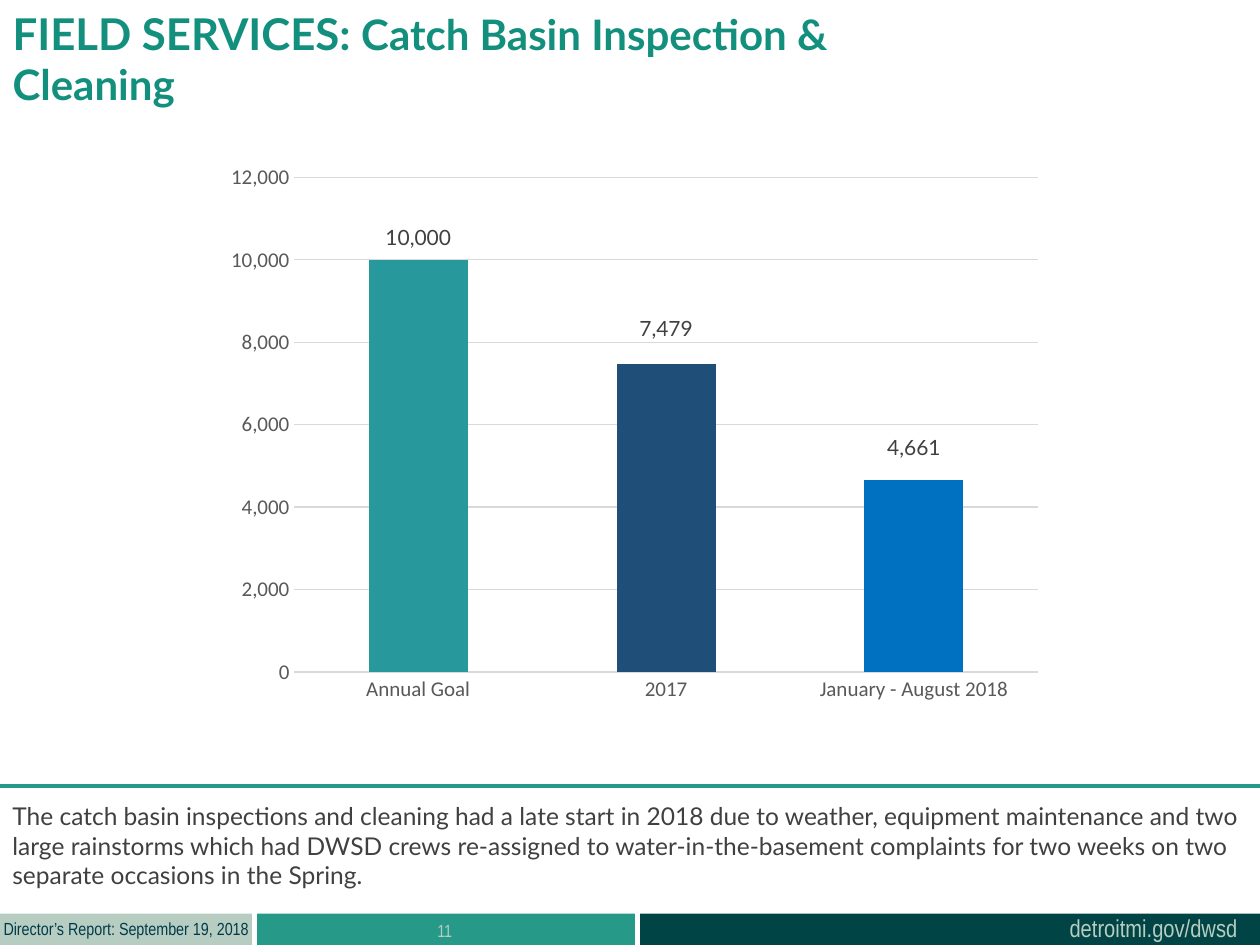
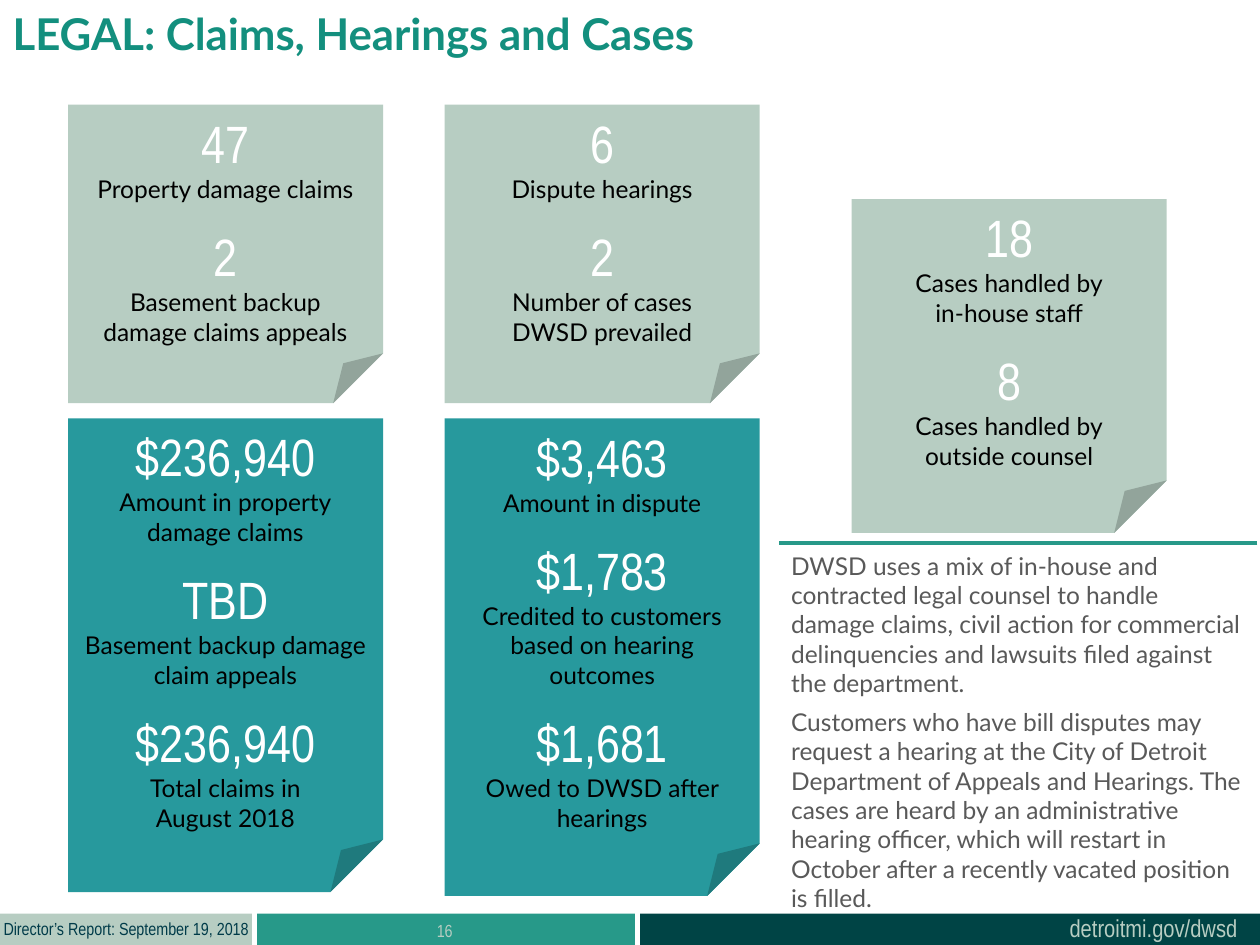
from lxml.etree import SubElement
from pptx import Presentation
from pptx.chart.data import CategoryChartData
from pptx.dml.color import RGBColor
from pptx.enum.chart import XL_CHART_TYPE, XL_TICK_MARK
from pptx.enum.shapes import MSO_CONNECTOR, MSO_SHAPE
from pptx.enum.text import MSO_ANCHOR, MSO_AUTO_SIZE, PP_ALIGN
from pptx.oxml import parse_xml
from pptx.oxml.ns import nsdecls, qn
from pptx.util import Inches, Pt

# Shared look
GREEN, DEEP, SAGE, TEAL = "279989", "004445", "B7CDC2", "27999D"
NAVY, BLUE, INK, TITLE = "1F4E79", "0070C0", "003B49", "138F7E"
BLACK, WHITE, DARK, GREY, RULE = "000000", "FFFFFF", "404040", "595959", "D9D9D9"
LATO, NARROW, CALIBRI = "Lato", "Arial Narrow", "Calibri"


def rgb(code):
    return RGBColor.from_string(code)


def style(font, size, color, face, bold=False):
    font.size, font.name, font.bold = Pt(size), face, bold
    font.color.rgb = rgb(color)


def place(shape, box):
    shape.left, shape.top, shape.width, shape.height = map(Inches, box)


def block(slide, kind, box, color):
    shape = slide.shapes.add_shape(kind, *map(Inches, box))
    shape.shadow.inherit = False
    shape.fill.solid()
    shape.fill.fore_color.rgb = rgb(color)
    shape.line.fill.background()
    return shape


def label(slide, box, text, size, color, face=LATO, wrap=True, align=PP_ALIGN.LEFT):
    frame = slide.shapes.add_textbox(*map(Inches, box)).text_frame
    frame.word_wrap = wrap
    para = frame.paragraphs[0]
    para.text, para.alignment = text, align
    style(para.font, size, color, face)


def rule(slide, left, right, top):
    line = slide.shapes.add_connector(
        MSO_CONNECTOR.STRAIGHT, Inches(right), Inches(top), Inches(left), Inches(top))
    line.line.color.rgb = rgb(GREEN)
    line.line.width = Pt(2.25)
    SubElement(line._element.spPr, qn("a:effectLst"))


# Footer bands with date, page and web address
def footer(slide, page, top=7.25):
    for left, width, color in ((2.04, 3, GREEN), (5.08, 5, DEEP), (0, 2, SAGE)):
        block(slide, MSO_SHAPE.RECTANGLE, (left, top, width, 0.25), color)
    label(slide, (8.39, top - 0.05, 1.55, 0.34), "detroitmi.gov/dwsd",
          14, SAGE, NARROW, wrap=False)
    label(slide, (-0.07, top - 0.01, 2.16, 0.27), "Director’s Report: September 19, 2018",
          10, INK, NARROW, wrap=False)
    label(slide, (2.03, top, 3, 0.4), str(page), 10, SAGE, NARROW, align=PP_ALIGN.CENTER)


def start(deck, page, width, *parts):
    """Add a slide with its footer and a title made of (text, size) parts."""
    slide = deck.slides.add_slide(deck.slide_layouts[5])
    footer(slide, page)
    title = slide.shapes.title
    place(title, (0, 0, width, 0.77))
    frame = title.text_frame
    frame.auto_size, frame.vertical_anchor = MSO_AUTO_SIZE.NONE, MSO_ANCHOR.TOP
    para = frame.paragraphs[0]
    para.alignment = PP_ALIGN.LEFT
    for text, size in parts:
        run = para.add_run()
        run.text = text
        style(run.font, size, TITLE, LATO, bold=True)
    return slide


# Column chart with one colour per bar and raised labels
def chart(slide, box):
    bars = (("Annual Goal", 10000, TEAL, -0.41),
            ("2017", 7479, NAVY, -0.34),
            ("January - August 2018", 4661, BLUE, -0.23))
    data = CategoryChartData(number_format="#,##0")
    data.categories = [bar[0] for bar in bars]
    data.add_series("Series 1", [bar[1] for bar in bars])
    graph = slide.shapes.add_chart(
        XL_CHART_TYPE.COLUMN_STACKED, *map(Inches, box), data).chart
    graph.has_legend = graph.has_title = False
    style(graph.font, 10, BLACK, CALIBRI)

    plot = graph.plots[0]
    plot.gap_width, plot.overlap, plot.vary_by_categories = 150, 100, False
    series = plot.series[0]
    for i, (_, _, color, lift) in enumerate(bars):
        point = series.points[i]
        point.format.fill.solid()
        point.format.fill.fore_color.rgb = rgb(color)
        style(point.data_label.font, 12, DARK, LATO)
        tag = series._element.findall(".//" + qn("c:dLbl"))[i]
        tag.insert(1, parse_xml(
            f'<c:layout {nsdecls("c")}><c:manualLayout><c:x val="0"/>'
            f'<c:y val="{lift}"/></c:manualLayout></c:layout>'))
    # No leader lines between bars and labels
    for lead in series._element.iter(qn("c:showLeaderLines")):
        lead.set("val", "0")

    cats, vals = graph.category_axis, graph.value_axis
    for axis in (cats, vals):
        axis.major_tick_mark = axis.minor_tick_mark = XL_TICK_MARK.NONE
        style(axis.tick_labels.font, 12, GREY, CALIBRI)
    vals.minimum_scale, vals.maximum_scale, vals.major_unit = 0, 12000, 2000
    vals.tick_labels.number_format = "#,##0"
    vals.tick_labels.number_format_is_linked = False
    vals.format.line.fill.background()
    for line in (cats.format.line, vals.major_gridlines.format.line):
        line.color.rgb = rgb(RULE)
        line.width = Pt(0.75)


# Folded note holding (figure, caption) pairs
def card(slide, box, color, pairs):
    frame = block(slide, MSO_SHAPE.FOLDED_CORNER, box, color).text_frame
    frame.word_wrap, frame.vertical_anchor = True, MSO_ANCHOR.TOP
    para = frame.paragraphs[0]
    for i, (figure, caption) in enumerate(pairs):
        if i:
            para = frame.add_paragraph()
            para.space_before = Pt(12)
        para.text = figure
        style(para.font, 30, WHITE, NARROW)
        note = frame.add_paragraph()
        note.text = caption
        style(note.font, 14, BLACK, LATO)
    for para in frame.paragraphs:
        para.alignment = PP_ALIGN.CENTER


def basins(deck):
    slide = start(deck, 11, 8.01, ("FIELD SERVICES: ", 25),
                  ("Catch Basin Inspection & Cleaning", 24))
    chart(slide, (1.7, 1.22, 6.67, 4.44))
    rule(slide, 0, 10, 6.24)
    label(slide, (0, 6.31, 10, 0.81),
          "The catch basin inspections and cleaning had a late start in 2018 due to "
          "weather, equipment maintenance and two large rainstorms which had DWSD crews "
          "re-assigned to water-in-the-basement complaints for two weeks on two separate "
          "occasions in the Spring.", 14, DARK)


def legal(deck):
    slide = start(deck, 16, 7.59, ("LEGAL: Claims, Hearings and Cases", 25))
    cards = (
        (0.54, 0.83, 2.37, SAGE, (
            ("47", "Property damage claims"),
            ("2", "Basement backup\ndamage claims appeals"))),
        (0.54, 3.32, 3.76, TEAL, (
            ("$236,940", "Amount in property\ndamage claims"),
            ("TBD", "Basement backup damage claim appeals"),
            ("$236,940", "Total claims in\nAugust 2018"))),
        (3.53, 0.83, 2.37, SAGE, (
            ("6", "Dispute hearings"),
            ("2", "Number of cases\nDWSD prevailed"))),
        (3.53, 3.32, 3.79, TEAL, (
            ("$3,463", "Amount in dispute"),
            ("$1,783", "Credited to customers based on hearing outcomes"),
            ("$1,681", "Owed to DWSD after hearings"))),
        (6.76, 1.58, 2.65, SAGE, (
            ("18", "Cases handled by\nin-house staff"),
            ("8", "Cases handled by\noutside counsel"))),
    )
    for left, top, height, color, pairs in cards:
        card(slide, (left, top, 2.5, height), color, pairs)

    # Side notes
    rule(slide, 6.18, 9.98, 4.31)
    label(slide, (6.18, 4.32, 3.82, 1.28),
          "DWSD uses a mix of in-house and contracted legal counsel to handle damage "
          "claims, civil action for commercial delinquencies and lawsuits filed against "
          "the department.", 14, GREY)
    label(slide, (6.18, 5.56, 3.82, 1.51),
          "Customers who have bill disputes may request a hearing at the City of Detroit "
          "Department of Appeals and Hearings. The cases are heard by an administrative "
          "hearing officer, which will restart in October after a recently vacated "
          "position is filled.", 14, GREY)


def main():
    deck = Presentation()
    deck.slide_width, deck.slide_height = Inches(10), Inches(7.5)
    basins(deck)
    legal(deck)
    deck.save("out.pptx")


if __name__ == "__main__":
    main()
